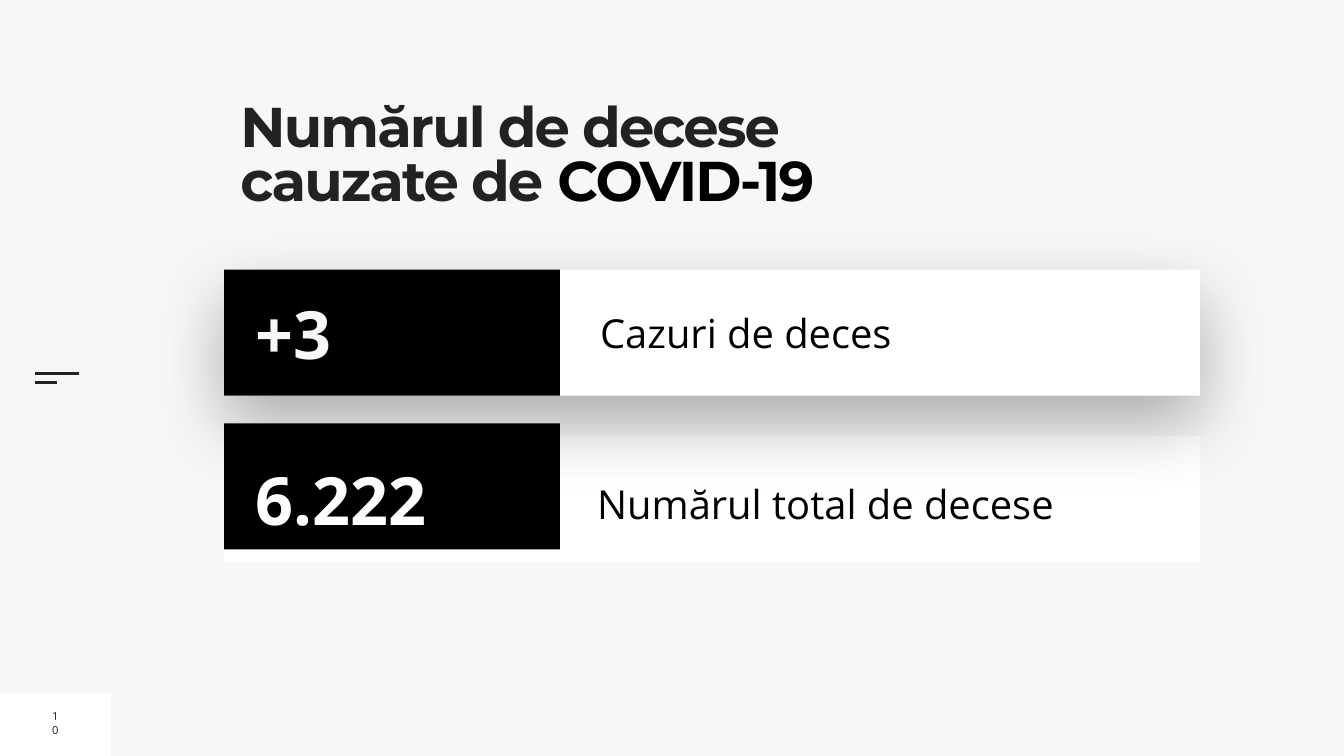
from lxml.etree import SubElement
from pptx import Presentation
from pptx.dml.color import RGBColor
from pptx.enum.shapes import MSO_CONNECTOR, MSO_SHAPE
from pptx.enum.text import MSO_ANCHOR, MSO_AUTO_SIZE, PP_ALIGN
from pptx.oxml.ns import qn
from pptx.util import Inches, Pt

BACKGROUND = RGBColor(0xF7, 0xF7, 0xF7)
PANEL = RGBColor(0xFE, 0xFF, 0xFF)
DARK = RGBColor(0x22, 0x22, 0x22)
BLACK = RGBColor(0, 0, 0)
WHITE = RGBColor(0xFF, 0xFF, 0xFF)

# Columns of the two rows, in inches
LEFT, ROW_W, FIGURE_W, ROW_H = 4.45, 19.36, 6.66, 2.5
FIGURE_X, FIGURE_TEXT_W, FIGURE_TEXT_H = 4.98, 6.03, 1.8


def add_box(s, x, y, w, h, color):
    sp = s.shapes.add_shape(MSO_SHAPE.RECTANGLE, *map(Inches, (x, y, w, h)))
    sp.fill.solid()
    sp.fill.fore_color.rgb = color
    sp.line.fill.background()
    sp.shadow.inherit = False
    return sp


def add_soft_shadow(sp):
    effects = sp._element.spPr.find(qn("a:effectLst"))
    shadow = SubElement(effects, qn("a:outerShdw"), blurRad=str(Pt(100)),
                        dist=str(Pt(40)), dir="5400000", rotWithShape="0")
    color = SubElement(shadow, qn("a:srgbClr"), val=str(BLACK))
    SubElement(color, qn("a:alpha"), val="30000")


def add_rule(s, x, y, w):
    line = s.shapes.add_connector(MSO_CONNECTOR.STRAIGHT, Inches(x), Inches(y),
                                  Inches(x + w), Inches(y))
    line.line.color.rgb = DARK
    line.line.width = Pt(3)
    SubElement(line._element.spPr, qn("a:effectLst"))


def set_frame(tf, inset, anchor):
    tf.word_wrap = True
    tf.auto_size = MSO_AUTO_SIZE.NONE
    tf.vertical_anchor = anchor
    tf.margin_left = tf.margin_right = Inches(inset)
    tf.margin_top = tf.margin_bottom = Inches(inset)


def set_font(font, size, color, bold=False, name="Open Sans"):
    font.name, font.size, font.bold = name, Pt(size), bold
    font.color.rgb = color


def add_text(s, text, x, y, w, h, size, color, bold=False, inset=0.1):
    tf = s.shapes.add_textbox(*map(Inches, (x, y, w, h))).text_frame
    set_frame(tf, inset, MSO_ANCHOR.MIDDLE)
    p = tf.paragraphs[0]
    p.text = text
    set_font(p.font, size, color, bold)
    return p


def add_title(s):
    title = s.shapes.title
    title.left, title.top, title.width, title.height = map(
        Inches, (4.77, 2.07, 13.01, 2.73))
    set_frame(title.text_frame, 0, MSO_ANCHOR.TOP)
    p = title.text_frame.paragraphs[0]
    p.alignment, p.line_spacing = PP_ALIGN.LEFT, 0.8
    for text, color in (("Numărul de decese cauzate de ", DARK),
                        ("COVID-19", BLACK)):
        r = p.add_run()
        r.text = text
        set_font(r.font, 80, color, True, "Montserrat")
        r._r.get_or_add_rPr().set("spc", "-270")


def add_figure(s, text, box_y, text_y, color):
    add_box(s, LEFT, box_y, FIGURE_W, ROW_H, BLACK)
    add_text(s, text, FIGURE_X, text_y, FIGURE_TEXT_W, FIGURE_TEXT_H,
             95, color, True)


def main():
    prs = Presentation()
    prs.slide_width, prs.slide_height = Inches(26.67), Inches(15)
    s = prs.slides.add_slide(prs.slide_layouts[5])
    s.background.fill.solid()
    s.background.fill.fore_color.rgb = BACKGROUND

    # Page furniture
    add_box(s, 0, 13.76, 2.2, 1.24, PANEL)
    add_rule(s, 0.69, 7.41, 0.88)
    add_rule(s, 0.69, 7.59, 0.44)
    add_title(s)
    p = add_text(s, "10", 0.93, 14.09, 0.34, 0.51, 16, DARK)
    p.alignment = PP_ALIGN.CENTER

    # Total row, under the shadow of the row above
    add_box(s, LEFT, 8.65, ROW_W, ROW_H, PANEL)
    p = add_text(s, "Numărul total de decese", 11.85, 9.29, 11.58, 1.12,
                 57, BLACK, inset=0)
    p.line_spacing, p.space_before = 1.3, Pt(20)
    add_figure(s, "6.222", 8.4, 9, WHITE)

    # New cases row
    add_soft_shadow(add_box(s, LEFT, 5.35, ROW_W, ROW_H, PANEL))
    add_text(s, "Cazuri de deces", 11.81, 6.01, 11.76, 1.16, 57, BLACK)
    add_figure(s, "+3", 5.35, 5.7, BACKGROUND)

    prs.save("out.pptx")


if __name__ == "__main__":
    main()
